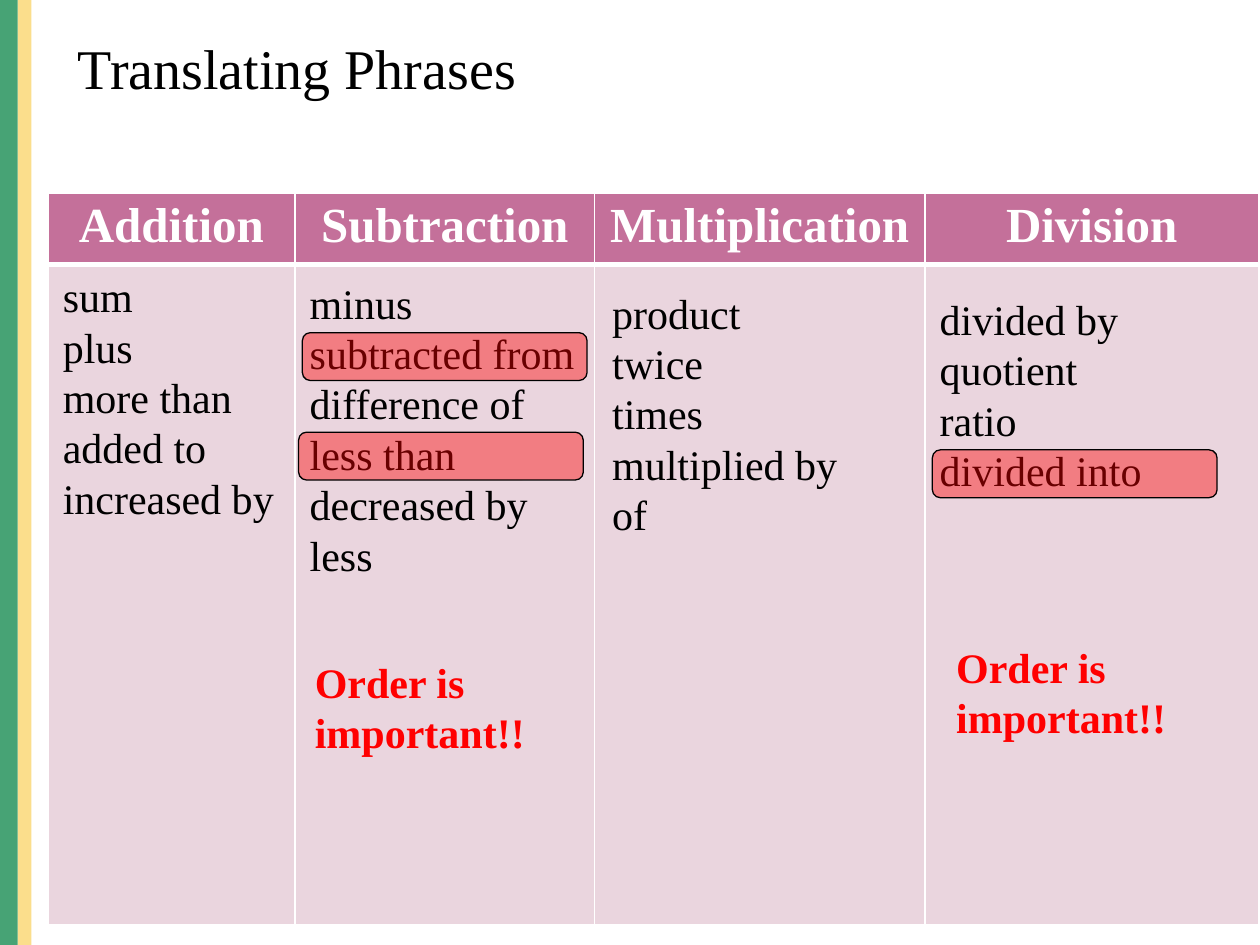
from lxml.etree import SubElement
from pptx import Presentation
from pptx.dml.color import RGBColor
from pptx.enum.shapes import MSO_SHAPE as Preset
from pptx.enum.text import MSO_ANCHOR as Anchor, PP_ALIGN as Align
from pptx.oxml import parse_xml
from pptx.oxml.ns import nsdecls, qn
from pptx.util import Inches, Pt

FONT = "Times New Roman"
COLUMNS = [("Addition", 1.96), ("Subtraction", 2.38), ("Multiplication", 2.62), ("Division", 2.65)]
PHRASES = [
    (0.4, 2.1, 1.91, 3.33, ["sum", "plus", "more than", "added to", "increased by"]),
    (2.36, 2.15, 2.35, 2.52,
     ["minus", "subtracted from", "difference of", "less than", "decreased by", "less"]),
    (4.76, 2.23, 2.35, 2.12, ["product", "twice", "times", "multiplied by", "of"]),
    (7.36, 2.28, 2.35, 2.12, ["divided by", "quotient", "ratio", "divided into"]),
]
WARNINGS = [(2.4, 5.16), (7.49, 5.04)]
HIGHLIGHTS = [(2.4, 2.64), (2.37, 3.43), (7.4, 3.57)]


def paint(target, color):
    target.solid()
    target.fore_color.rgb = RGBColor.from_string(color)


def style_text(frame, size, color, bold=False):
    for para in frame.paragraphs:
        for span in para.runs:
            span.font.name = FONT
            span.font.size = Pt(size)
            span.font.bold = bold
            span.font.color.rgb = RGBColor.from_string(color)


def add_text(page, left, top, width, height, lines, size=24, color="000000", bold=False):
    box = page.shapes.add_textbox(Inches(left), Inches(top), Inches(width), Inches(height))
    frame = box.text_frame
    frame.word_wrap = True
    frame.text = "\n".join(lines)
    style_text(frame, size, color, bold)
    return frame


def add_block(page, preset, left, top, width, height, color, opacity):
    block = page.shapes.add_shape(
        preset, Inches(left), Inches(top), Inches(width), Inches(height))
    block.shadow.inherit = False
    paint(block.fill, color)
    color_node = block.fill._xPr.find(qn("a:solidFill"))[0]
    SubElement(color_node, qn("a:alpha"), val=str(opacity * 1000))
    block.line.fill.background()
    return block


def add_highlight(page, left, top):
    block = add_block(page, Preset.ROUNDED_RECTANGLE, left, top, 2.26, 0.38, "FF0000", 41)
    block.adjustments[0] = 0.167
    paint(block.line.fill, "000000")
    block.line.width = Pt(0.75)


def set_borders(cell, top, bottom):
    widths = {"lnL": 1, "lnR": 1, "lnT": top, "lnB": bottom}
    properties = cell._tc.get_or_add_tcPr()
    for index, (side, width) in enumerate(widths.items()):
        properties.insert(index, parse_xml(
            f'<a:{side} {nsdecls("a")} w="{Pt(width)}"><a:solidFill>'
            f'<a:srgbClr val="FFFFFF"/></a:solidFill></a:{side}>'))


def add_operations_table(page):
    table = page.shapes.add_table(
        2, len(COLUMNS), Inches(0.38), Inches(1.53), Inches(9.61), Inches(5.8)).table
    table.rows[0].height = Inches(0.56)
    table.rows[1].height = Inches(5.24)
    for index, (heading, width) in enumerate(COLUMNS):
        table.columns[index].width = Inches(width)
        header, body = table.cell(0, index), table.cell(1, index)
        header.text = heading
        header.text_frame.paragraphs[0].alignment = Align.CENTER
        style_text(header.text_frame, 28, "FFFFFF", True)
        paint(header.fill, "C4709A")
        paint(body.fill, "EAD5DE")
        set_borders(header, 1, 3)
        set_borders(body, 3, 1)


def main():
    deck = Presentation()
    deck.slide_width, deck.slide_height = Inches(10), Inches(7.5)
    page = deck.slides.add_slide(deck.slide_layouts[6])

    add_block(page, Preset.RECTANGLE, 0.14, 0, 0.11, 7.5, "F8BE1A", 50)
    add_block(page, Preset.RECTANGLE, 0, 0, 0.14, 7.5, "339966", 90)

    title = add_text(page, 0.52, 0.22, 7.59, 0.78, ["Translating Phrases"], 32)
    title.margin_right = 0
    title.vertical_anchor = Anchor.TOP
    title.paragraphs[0].space_before = Pt(3.2)

    add_operations_table(page)
    for phrase_list in PHRASES:
        add_text(page, *phrase_list)
    for left, top in WARNINGS:
        add_text(page, left, top, 2.09, 0.91, ["Order is important!!"], color="FF0000", bold=True)
    for left, top in HIGHLIGHTS:
        add_highlight(page, left, top)

    deck.save("out.pptx")


if __name__ == "__main__":
    main()
